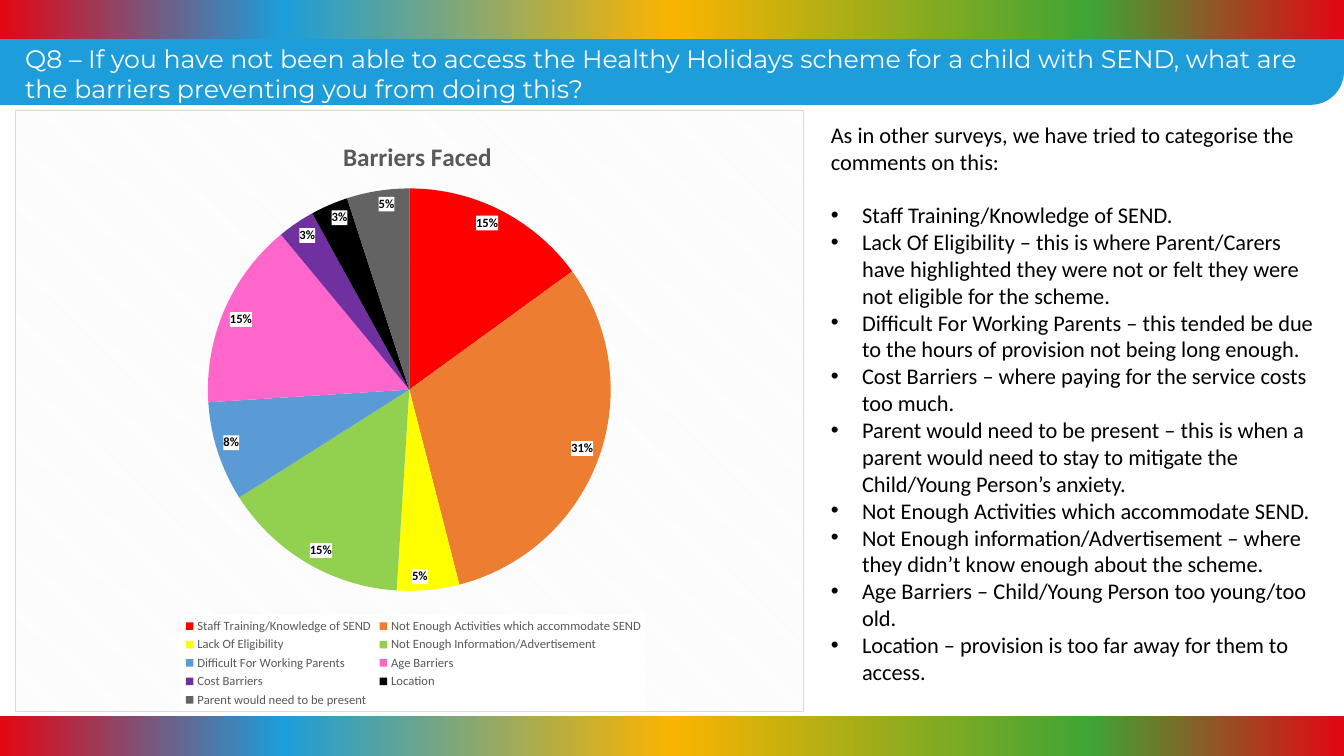
"""Build the survey slide on barriers to the Healthy Holidays scheme."""
from lxml.etree import SubElement
from pptx import Presentation
from pptx.chart.data import CategoryChartData
from pptx.dml.color import RGBColor
from pptx.enum.chart import XL_CHART_TYPE, XL_LABEL_POSITION, XL_LEGEND_POSITION
from pptx.enum.shapes import MSO_SHAPE
from pptx.enum.text import MSO_ANCHOR, MSO_AUTO_SIZE, PP_ALIGN
from pptx.oxml import parse_xml
from pptx.oxml.ns import nsdecls, qn
from pptx.util import Inches, Pt

WHITE = RGBColor(0xFF, 0xFF, 0xFF)
BLACK = RGBColor(0, 0, 0)
GREY = RGBColor(0x59, 0x59, 0x59)
PALE = RGBColor(0xF2, 0xF2, 0xF2)
EDGE = RGBColor(0xD9, 0xD9, 0xD9)
RED = RGBColor(0xE3, 0x06, 0x13)
BLUE = RGBColor(0x1D, 0x9D, 0xD9)
GOLD = RGBColor(0xFA, 0xB4, 0x00)
GREEN = RGBColor(0x3F, 0xA5, 0x35)

TITLE = ("Q8 – If you have not been able to access the Healthy Holidays scheme "
         "for a child with SEND, what are the barriers preventing you from doing this?")
INTRO = "As in other surveys, we have tried to categorise the comments on this:"
POINTS = [
    "Staff Training/Knowledge of SEND.",
    "Lack Of Eligibility – this is where Parent/Carers have highlighted they "
    "were not or felt they were not eligible for the scheme.",
    "Difficult For Working Parents – this tended be due to the hours of "
    "provision not being long enough.",
    "Cost Barriers – where paying for the service costs too much.",
    "Parent would need to be present – this is when a parent would need to "
    "stay to mitigate the Child/Young Person’s anxiety.",
    "Not Enough Activities which accommodate SEND.",
    "Not Enough information/Advertisement – where they didn’t know enough "
    "about the scheme.",
    "Age Barriers – Child/Young Person too young/too old.",
    "Location – provision is too far away for them to access.",
]
SLICES = [
    ("Staff Training/Knowledge of SEND", 15, RGBColor(0xFF, 0, 0)),
    ("Not Enough Activities which accommodate SEND", 31, RGBColor(0xED, 0x7D, 0x31)),
    ("Lack Of Eligibility", 5, RGBColor(0xFF, 0xFF, 0)),
    ("Not Enough Information/Advertisement", 15, RGBColor(0x92, 0xD0, 0x50)),
    ("Difficult For Working Parents", 8, RGBColor(0x5B, 0x9B, 0xD5)),
    ("Age Barriers", 15, RGBColor(0xFF, 0x66, 0xCC)),
    ("Cost Barriers", 3, RGBColor(0x70, 0x30, 0xA0)),
    ("Location", 3, BLACK),
    ("Parent would need to be present", 5, RGBColor(0x63, 0x63, 0x63)),
]
STOPS = [(0, RED), (21, BLUE), (50, GOLD), (81, GREEN), (100, RED)]
STRIPS = [-0.01, 7.1]
WIDE, STRIP = 13.33, 0.4


def place(item, left, top, width, height):
    """Move and size a shape in inches."""
    item.left, item.top = Inches(left), Inches(top)
    item.width, item.height = Inches(width), Inches(height)


def style(font, size, color, name="Calibri", bold=False):
    """Set the look of a font."""
    font.size, font.name, font.bold = Pt(size), name, bold
    font.color.rgb = color


def add_box(slide, kind, top, height):
    """Add a full-width shape with no line or shadow."""
    box = slide.shapes.add_shape(kind, 0, Inches(top), Inches(WIDE), Inches(height))
    box.shadow.inherit = False
    box.line.fill.background()
    return box


def add_strip(slide, top):
    """Add a rainbow strip."""
    strip = add_box(slide, MSO_SHAPE.RECTANGLE, top, STRIP)
    strip.fill.gradient()
    strip.fill.gradient_angle = 0
    stops = strip._element.spPr.find(".//" + qn("a:gsLst"))
    for old in list(stops):
        stops.remove(old)
    for spot, color in STOPS:
        stop = SubElement(stops, qn("a:gs"), pos=str(spot * 1000))
        SubElement(stop, qn("a:srgbClr"), val=str(color))


def set_frame(frame):
    """Fix wrapping and anchor of a text frame."""
    frame.word_wrap = True
    frame.auto_size = MSO_AUTO_SIZE.NONE
    frame.vertical_anchor = MSO_ANCHOR.TOP


def add_text(para, text, size, color, name="Calibri"):
    """Write one left-aligned run."""
    para.alignment = PP_ALIGN.LEFT
    para.space_before = para.space_after = Pt(0)
    para.line_spacing = 1.0
    run = para.add_run()
    run.text = text
    style(run.font, size, color, name)


def set_bullet(para, mark):
    """Give a paragraph a hanging bullet, or none."""
    props = para._p.get_or_add_pPr()
    indent = Inches(0.31) if mark else 0
    props.set("marL", str(indent))
    props.set("indent", str(-indent))
    if mark:
        SubElement(props, qn("a:buFont"), typeface="Arial")
        SubElement(props, qn("a:buChar"), char=mark)
    else:
        SubElement(props, qn("a:buNone"))


def set_layout(parent, index, **parts):
    """Place a chart part by fractions of the chart."""
    old = parent.find(qn("c:layout"))
    if old is not None:
        parent.remove(old)
    layout = parse_xml(f"<c:layout {nsdecls('c')}><c:manualLayout/></c:layout>")
    modes = {"xMode": "edge", "yMode": "edge"}
    if "layoutTarget" in parts:
        modes = {"layoutTarget": parts.pop("layoutTarget"), **modes}
    for tag, value in {**modes, **parts}.items():
        SubElement(layout[0], qn("c:" + tag), val=str(value))
    parent.insert(index, layout)


def make_fill(inner):
    """Wrap fill markup as chart shape properties."""
    return parse_xml(f"<c:spPr {nsdecls('c', 'a')}>{inner}</c:spPr>")


def make_color(color):
    """Return the markup of a colour."""
    return f'<a:srgbClr val="{color}"/>'


def add_pie(slide):
    """Add the pie chart of barriers."""
    data = CategoryChartData()
    data.categories = [name for name, _, _ in SLICES]
    data.add_series("Series 1", [value for _, value, _ in SLICES])
    chart = slide.shapes.add_chart(
        XL_CHART_TYPE.PIE, Inches(0.15), Inches(1.09), Inches(7.82), Inches(5.97), data).chart
    style(chart.font, 10, BLACK)

    chart.has_title = True
    run = chart.chart_title.text_frame.paragraphs[0].add_run()
    run.text = "Barriers Faced"
    style(run.font, 18, GREY, bold=True)
    set_layout(chart.chart_title._element, 1, x=0.41, y=0.04)

    chart.has_legend = True
    legend = chart.legend
    legend.position = XL_LEGEND_POSITION.BOTTOM
    legend.include_in_layout = False
    style(legend.font, 9, GREY)
    set_layout(legend._element, 1, x=0.21, y=0.84, w=0.59, h=0.16)

    plot = chart.plots[0]
    plot.vary_by_categories = True
    set_layout(plot._element.getparent(), 0, layoutTarget="inner",
               x=0.24, y=0.13, w=0.52, h=0.67)
    series = plot.series[0]
    for index, (_, _, color) in enumerate(SLICES):
        fill = series.points[index].format.fill
        fill.solid()
        fill.fore_color.rgb = color
    labels = series.data_labels
    labels.show_percentage = True
    labels.show_value = False
    labels.number_format = "0%"
    labels.number_format_is_linked = False
    labels.position = XL_LABEL_POSITION.INSIDE_END
    style(labels.font, 9, BLACK, bold=True)

    plain = f"<a:solidFill>{make_color(WHITE)}</a:solidFill>"
    for part in (legend, labels):
        part._element.find(qn("c:txPr")).addprevious(make_fill(plain))
    chart._chartSpace.find(qn("c:chart")).addnext(make_fill(
        f'<a:pattFill prst="dkDnDiag"><a:fgClr>{make_color(PALE)}</a:fgClr>'
        f"<a:bgClr>{make_color(WHITE)}</a:bgClr></a:pattFill>"
        f'<a:ln w="{Pt(0.75)}"><a:solidFill>{make_color(EDGE)}</a:solidFill></a:ln>'))


def main():
    """Build and save the slide."""
    deck = Presentation()
    deck.slide_width, deck.slide_height = Inches(WIDE), Inches(7.5)
    slide = deck.slides.add_slide(deck.slide_layouts[1])
    title, body = slide.placeholders

    band = add_box(slide, MSO_SHAPE.ROUND_1_RECTANGLE, 0.38, 0.66)
    band.adjustments[0] = 0.5
    band.rotation = 180
    band._element.spPr.xfrm.set("flipH", "1")
    band.fill.solid()
    band.fill.fore_color.rgb = BLUE
    for top in STRIPS:
        add_strip(slide, top)

    place(title, 0.15, 0.38, 13.03, 0.71)
    set_frame(title.text_frame)
    add_text(title.text_frame.paragraphs[0], TITLE, 18, WHITE, "Montserrat")
    slide.shapes._spTree.append(title._element)
    add_pie(slide)

    place(body, 8.14, 1.15, 5.05, 5.76)
    frame = body.text_frame
    set_frame(frame)
    intro = frame.paragraphs[0]
    add_text(intro, INTRO, 16, BLACK)
    intro.space_after = Pt(19)
    set_bullet(intro, None)
    for text in POINTS:
        para = frame.add_paragraph()
        add_text(para, text, 16, BLACK)
        set_bullet(para, "•")
    deck.save("out.pptx")


if __name__ == "__main__":
    main()
